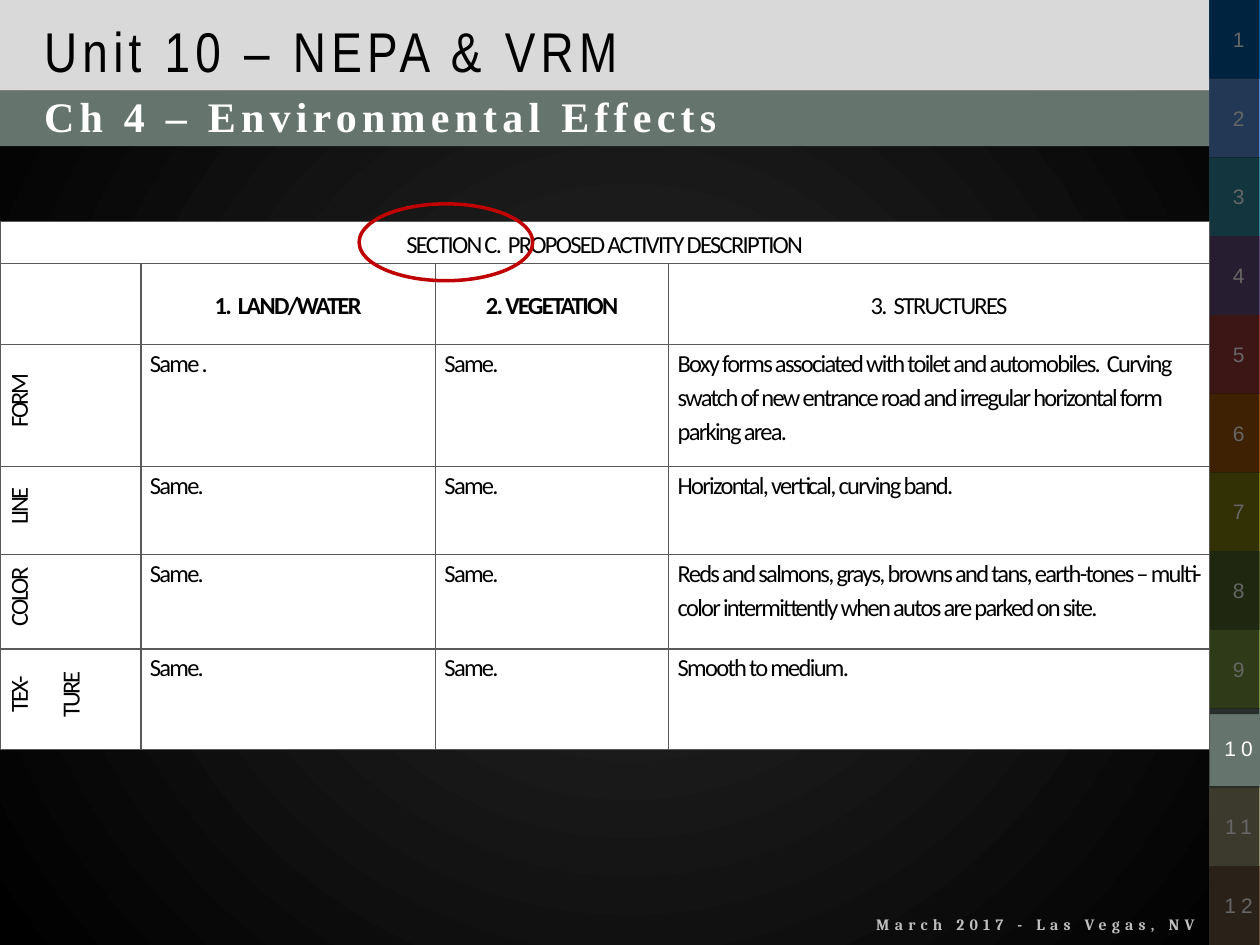
from lxml import etree
from pptx import Presentation
from pptx.dml.color import RGBColor as RGB
from pptx.enum.shapes import MSO_SHAPE as Form
from pptx.enum.text import MSO_ANCHOR as Anchor, PP_ALIGN as Align
from pptx.oxml import parse_xml
from pptx.oxml.ns import nsdecls, qn
from pptx.util import Cm, Pt

BLACK = RGB(0x00, 0x00, 0x00)
WHITE = RGB(0xFF, 0xFF, 0xFF)
PALE = RGB(0xD9, 0xD9, 0xD9)
SILVER = RGB(0xBF, 0xBF, 0xBF)
SAGE = RGB(0x65, 0x75, 0x6D)
RULE = RGB(0x59, 0x59, 0x59)
RED = RGB(0xC0, 0x00, 0x00)
TABS = [
    RGB(0x00, 0x5A, 0x9E), RGB(0x55, 0x8E, 0xD5), RGB(0x31, 0x85, 0x9C),
    RGB(0x60, 0x4A, 0x7B), RGB(0x95, 0x37, 0x35), RGB(0x9A, 0x54, 0x06),
    RGB(0x7E, 0x7B, 0x0F), RGB(0x4F, 0x62, 0x28), RGB(0x77, 0x93, 0x3C),
    SAGE, RGB(0x96, 0x93, 0x72), RGB(0x69, 0x57, 0x3F),
]
GLOW = [(0, "2E2E2E"), (27, "1D1D1D"), (100, "000000")]

WIDE, HIGH = 25.4, 19.05
MAIN = 24.38            # width left of the tab strip
STEP = HIGH / len(TABS)

HEADS = ["", "1.  LAND/WATER", "2. VEGETATION", "3.  STRUCTURES"]
ROWS = [
    ["FORM", "Same .", "Same.",
     "Boxy forms associated with toilet and automobiles.  Curving swatch of "
     "new entrance road and irregular horizontal form parking area."],
    ["LINE", "Same.", "Same.", "Horizontal, vertical, curving band."],
    ["COLOR", "Same.", "Same.",
     "Reds and salmons, grays, browns and tans, earth-tones – multi-color "
     "intermittently when autos are parked on site."],
    ["TEX-\nTURE", "Same.", "Same.", "Smooth to medium."],
]
COLS = [2.84, 5.94, 4.7, 10.9]
TALL = [0.84, 1.63, 2.46, 1.78, 1.9, 2.03]


def write(frame, text, font="Calibri", size=14, color=BLACK, bold=False,
          align=Align.LEFT, track=0, line=None, after=None, indent=0):
    """Fill a text frame, one paragraph for each line of text."""
    for i, part in enumerate(text.split("\n")):
        para = frame.add_paragraph() if i else frame.paragraphs[0]
        para.alignment = align
        if line:
            para.line_spacing = line
        if after:
            para.space_after = Pt(after)
        if indent:
            props = para._p.get_or_add_pPr()
            props.set("marL", str(Cm(indent)))
            props.set("indent", "0")
        run = para.add_run()
        run.text = part
        run.font.name, run.font.size = font, Pt(size)
        run.font.bold, run.font.color.rgb = bold, color
        run._r.get_or_add_rPr().set("spc", str(round(track * 100)))


class Page:
    def __init__(self, deck):
        self.slide = deck.slides.add_slide(deck.slide_layouts[6])
        self.shapes = self.slide.shapes
        self.body = dict(line=1.15, after=10)

    def glow(self, stops):
        """Radial gradient background."""
        marks = "".join(
            f'<a:gs pos="{pos * 1000}"><a:srgbClr val="{hue}"/></a:gs>'
            for pos, hue in stops)
        back = parse_xml(
            f'<p:bg {nsdecls("p", "a")}><p:bgPr><a:gradFill><a:gsLst>{marks}'
            '</a:gsLst><a:path path="circle"><a:fillToRect l="50000" t="50000" '
            'r="50000" b="50000"/></a:path></a:gradFill><a:effectLst/>'
            '</p:bgPr></p:bg>')
        self.slide.element.find(qn("p:cSld")).insert(0, back)

    def shape(self, x, y, w, h, fill=None, line=None, form=Form.RECTANGLE,
              alpha=None):
        item = self.shapes.add_shape(form, Cm(x), Cm(y), Cm(w), Cm(h))
        item.shadow.inherit = False
        if fill is None:
            item.fill.background()
        else:
            item.fill.solid()
            item.fill.fore_color.rgb = fill
        if line is None:
            item.line.fill.background()
        else:
            item.line.color.rgb, item.line.width = line, Pt(2)
        if alpha is not None:
            hue = next(item._element.spPr.iter(qn("a:srgbClr")))
            etree.SubElement(hue, qn("a:alpha")).set("val", str(alpha * 1000))

    def label(self, x, y, w, h, text, wrap=True, **style):
        box = self.shapes.add_textbox(Cm(x), Cm(y), Cm(w), Cm(h))
        box.text_frame.word_wrap = wrap
        write(box.text_frame, text, **style)

    def cell(self, cell, text="", anchor=Anchor.TOP, side=0.18, turn=False,
             **style):
        props = cell._tc.get_or_add_tcPr()
        for edge in ("lnL", "lnR", "lnT", "lnB"):
            props.append(parse_xml(
                f'<a:{edge} {nsdecls("a")} w="{Pt(1)}"><a:solidFill>'
                f'<a:srgbClr val="{RULE}"/></a:solidFill></a:{edge}>'))
        cell.fill.solid()
        cell.fill.fore_color.rgb = WHITE
        cell.margin_left = cell.margin_right = Cm(side)
        cell.margin_top = cell.margin_bottom = 0
        cell.vertical_anchor = anchor
        if turn:
            props.set("vert", "vert270")
        if text:
            write(cell.text_frame, text, **self.body, **style)

    def table(self, x, y, title, heads, rows):
        grid = self.shapes.add_table(
            len(TALL), len(COLS), Cm(x), Cm(y), Cm(sum(COLS)),
            Cm(sum(TALL))).table
        grid.first_row = grid.horz_banding = False
        for col, w in zip(grid.columns, COLS):
            col.width = Cm(w)
        for row, h in zip(grid.rows, TALL):
            row.height = Cm(h)
        grid.cell(0, 0).merge(grid.cell(0, len(COLS) - 1))
        mid = dict(anchor=Anchor.MIDDLE, align=Align.CENTER)
        for c, head in enumerate(heads):
            self.cell(grid.cell(0, c), "" if c else title, track=-1, **mid)
            self.cell(grid.cell(1, c), head, track=-1, bold=c in (1, 2), **mid)
        for r, (name, *notes) in enumerate(rows, 2):
            side = 0.18 if "\n" in name else 0.02
            self.cell(grid.cell(r, 0), name, side=side, turn=True, track=-1.4,
                      indent=0.2, **mid)
            for c, note in enumerate(notes, 1):
                self.cell(grid.cell(r, c), note, track=-1)


def main():
    deck = Presentation()
    deck.slide_width, deck.slide_height = Cm(WIDE), Cm(HIGH)
    page = Page(deck)
    page.glow(GLOW)

    # Footer and title bands
    page.label(15.44, 18.31, 8.89, 0.53, "March 2017 - Las Vegas, NV",
               font="Cambria", size=9, color=SILVER, bold=True,
               align=Align.RIGHT, track=3)
    page.shape(0, 0, MAIN, 1.83, PALE)
    page.shape(0, 1.83, MAIN, 1.12, SAGE)

    # Numbered tab strip
    for i, hue in enumerate(TABS):
        page.shape(MAIN, i * STEP, WIDE - MAIN, STEP, hue)
        page.label(24.37, 0.41 + i * STEP, 1.2, 0.76, str(i + 1), wrap=False,
                   font="Arial", size=12, color=WHITE, align=Align.CENTER,
                   track=3)

    # Titles
    page.label(0.64, 0.2, 19.69, 1.52, "Unit 10 – NEPA & VRM",
               font="Arial Narrow", size=32, track=3)
    page.label(0.64, 1.7, 19.69, 1.3, "Ch 4 – Environmental Effects",
               font="Times New Roman", size=24, color=WHITE, bold=True,
               track=3)

    # Shades over the other units
    for y, h in ((15.85, 3.2), (0, 14.4)):
        page.shape(MAIN, y, 1, h, BLACK, alpha=60)

    # Contrast table and its marker
    page.table(0, 4.47, "SECTION C.  PROPOSED ACTIVITY DESCRIPTION", HEADS,
               ROWS)
    page.shape(7.24, 4.11, 3.5, 1.55, line=RED, form=Form.OVAL)

    deck.save("out.pptx")


if __name__ == "__main__":
    main()
